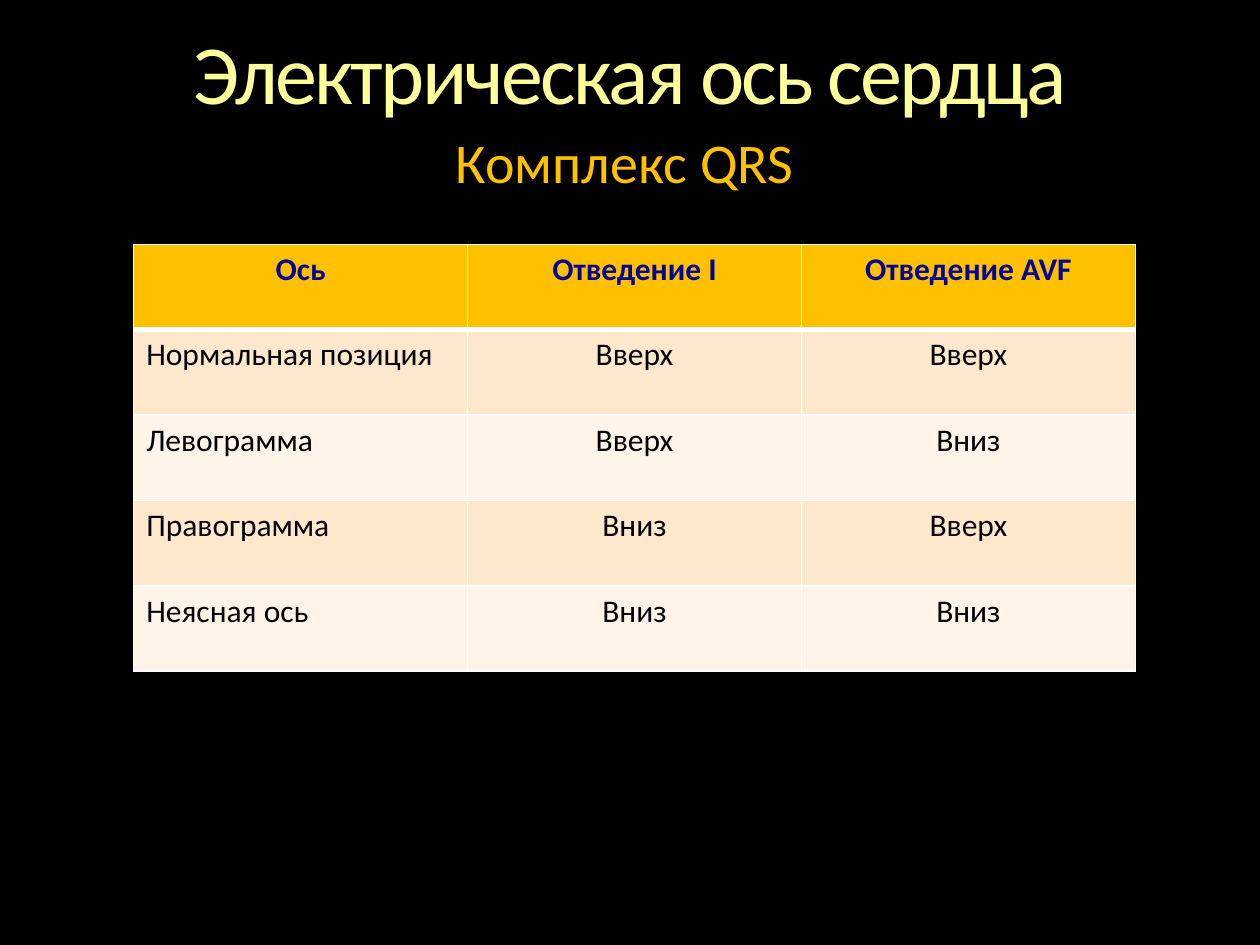
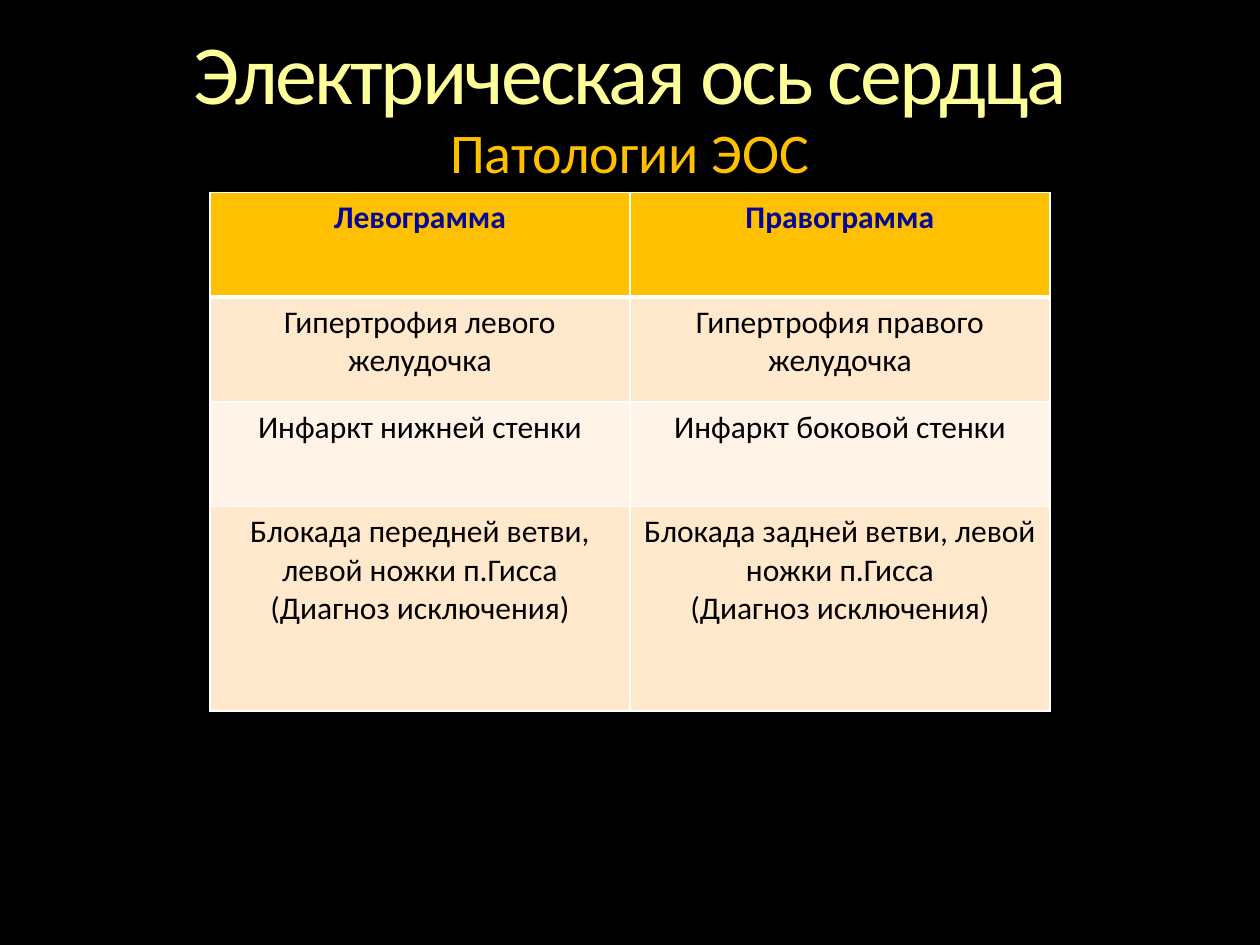
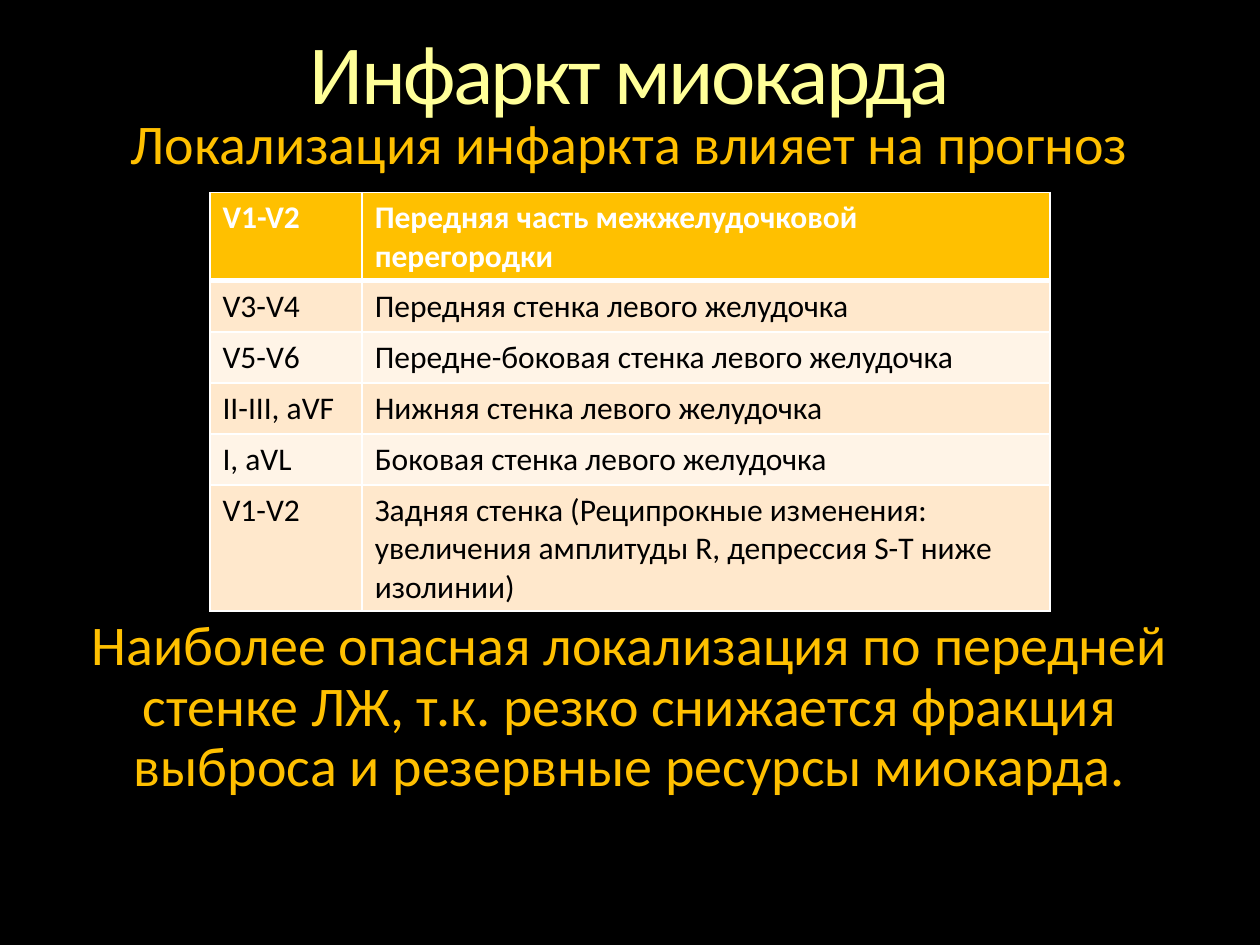
from dataclasses import dataclass

from lxml.etree import SubElement
from pptx import Presentation
from pptx.dml.color import RGBColor
from pptx.enum.text import MSO_ANCHOR, PP_ALIGN
from pptx.oxml.ns import qn
from pptx.util import Pt

LEFT, CENTER = PP_ALIGN.LEFT, PP_ALIGN.CENTER


@dataclass(frozen=True)
class Theme:
    font: str = "Calibri"
    background: str = "000000"
    title: str = "FFFF99"
    accent: str = "FFC000"
    header_blue: str = "050595"
    white: str = "FFFFFF"
    cell_text: str = "000000"
    bands: tuple = ("FFE8CC", "FFF4E7")
    title_size: int = 48
    body_size: int = 32
    cell_size: int = 18
    title_spacing: float = -1.5
    thin_border: int = 1
    header_border: int = 3


THEME = Theme()
PAGE_SIZE = (720, 540)
TITLE_BOX = (30, 18, 660, 52.8)

# Content: boxes are left, top, width, height in points
PAGES = [
    {
        "title": "Электрическая ось сердца",
        "body": ["Комплекс QRS"],
        "body_box": (167, 77, 380, 34.6),
        "table_at": (76.4, 139.6),
        "columns": [190.8] * 3,
        "rows": [48.8] * 5,
        "header_color": THEME.header_blue,
        "aligns": [LEFT, CENTER, CENTER],
        "cells": [
            ("Ось", "Отведение I", "Отведение AVF"),
            ("Нормальная позиция", "Вверх", "Вверх"),
            ("Левограмма", "Вверх", "Вниз"),
            ("Правограмма", "Вниз", "Вверх"),
            ("Неясная ось", "Вниз", "Вниз"),
        ],
    },
    {
        "title": "Электрическая ось сердца",
        "body": ["Патологии ЭОС"],
        "body_box": (30, 71.2, 660, 77.8),
        "table_at": (120, 110),
        "columns": [240] * 2,
        "rows": [59.8] * 3 + [117],
        "header_color": THEME.header_blue,
        "aligns": [CENTER, CENTER],
        "cells": [
            ("Левограмма", "Правограмма"),
            ("Гипертрофия левого желудочка", "Гипертрофия правого желудочка"),
            ("Инфаркт нижней стенки", "Инфаркт боковой стенки"),
            ("Блокада передней ветви, левой ножки п.Гисса (Диагноз исключения)",
             "Блокада задней ветви, левой ножки п.Гисса\v(Диагноз исключения)"),
        ],
    },
    {
        "title": "Инфаркт миокарда",
        "body": [
            "Локализация инфаркта влияет на прогноз",
            "Наиболее опасная локализация по передней стенке ЛЖ, т.к. резко "
            "снижается фракция выброса и резервные ресурсы миокарда.",
        ],
        "body_box": (30, 66.2, 660, 445.7),
        "body_gap": 252,
        "table_at": (120, 110),
        "columns": [87, 393],
        "rows": [50.4] + [29.2] * 4 + [72],
        "header_color": THEME.white,
        "aligns": [LEFT, LEFT],
        "cells": [
            ("V1-V2", "Передняя часть межжелудочковой перегородки"),
            ("V3-V4", "Передняя стенка левого желудочка"),
            ("V5-V6", "Передне-боковая стенка левого желудочка"),
            ("II-III, aVF", "Нижняя стенка левого желудочка"),
            ("I, aVL", "Боковая стенка левого желудочка"),
            ("V1-V2", "Задняя стенка (Реципрокные изменения: увеличения "
                      "амплитуды R, депрессия S-T ниже изолинии)"),
        ],
    },
]


def apply(target, **values):
    for name, value in values.items():
        setattr(target, name, value)


def style_paragraph(para, size, color, bold=False, **layout):
    apply(para, **layout)
    for span in para.runs:
        apply(span.font, name=THEME.font, size=Pt(size), bold=bold)
        span.font.color.rgb = RGBColor.from_string(color)


def add_text(page, box, texts, size, color, gap=0, spacing=0):
    frame = page.shapes.add_textbox(*map(Pt, box)).text_frame
    apply(frame, word_wrap=True, vertical_anchor=MSO_ANCHOR.TOP, margin_left=0,
          margin_right=0, margin_top=0, margin_bottom=0)
    frame.text = "\n".join(texts)
    for index, para in enumerate(frame.paragraphs):
        style_paragraph(para, size, color, alignment=CENTER, line_spacing=0.9,
                        space_before=Pt(gap if index else 0))
        if spacing:
            for span in para.runs:
                span.font._element.set("spc", str(round(spacing * 100)))


def add_borders(cell, top, bottom):
    properties = cell._tc.get_or_add_tcPr()
    thin = THEME.thin_border
    for side, width in (("L", thin), ("R", thin), ("T", top), ("B", bottom)):
        line = SubElement(properties, qn(f"a:ln{side}"), w=str(Pt(width)))
        fill = SubElement(line, qn("a:solidFill"))
        SubElement(fill, qn("a:srgbClr"), val=THEME.white)


def add_grid(page, content):
    columns, rows = content["columns"], content["rows"]
    box = (*content["table_at"], sum(columns), sum(rows))
    table = page.shapes.add_table(len(rows), len(columns), *map(Pt, box)).table
    apply(table, first_row=False, horz_banding=False)
    for column, width in zip(table.columns, columns):
        column.width = Pt(width)
    for index, (row, height) in enumerate(zip(table.rows, rows)):
        row.height = Pt(height)
        header = index == 0
        fill = THEME.accent if header else THEME.bands[(index - 1) % 2]
        color = content["header_color"] if header else THEME.cell_text
        top = THEME.header_border if index == 1 else THEME.thin_border
        bottom = THEME.header_border if header else THEME.thin_border
        for cell, text, align in zip(row.cells, content["cells"][index], content["aligns"]):
            cell.text = text
            add_borders(cell, top, bottom)
            cell.fill.solid()
            cell.fill.fore_color.rgb = RGBColor.from_string(fill)
            style_paragraph(cell.text_frame.paragraphs[0], THEME.cell_size, color,
                            bold=header, alignment=CENTER if header and CENTER in content["aligns"] else align)


def add_page(deck, content):
    page = deck.slides.add_slide(deck.slide_layouts[6])
    page.background.fill.solid()
    page.background.fill.fore_color.rgb = RGBColor.from_string(THEME.background)
    add_text(page, TITLE_BOX, [content["title"]], THEME.title_size, THEME.title,
             spacing=THEME.title_spacing)
    add_text(page, content["body_box"], content["body"], THEME.body_size,
             THEME.accent, gap=content.get("body_gap", 0))
    add_grid(page, content)


def main():
    deck = Presentation()
    deck.slide_width, deck.slide_height = map(Pt, PAGE_SIZE)
    for content in PAGES:
        add_page(deck, content)
    deck.save("out.pptx")


if __name__ == "__main__":
    main()
